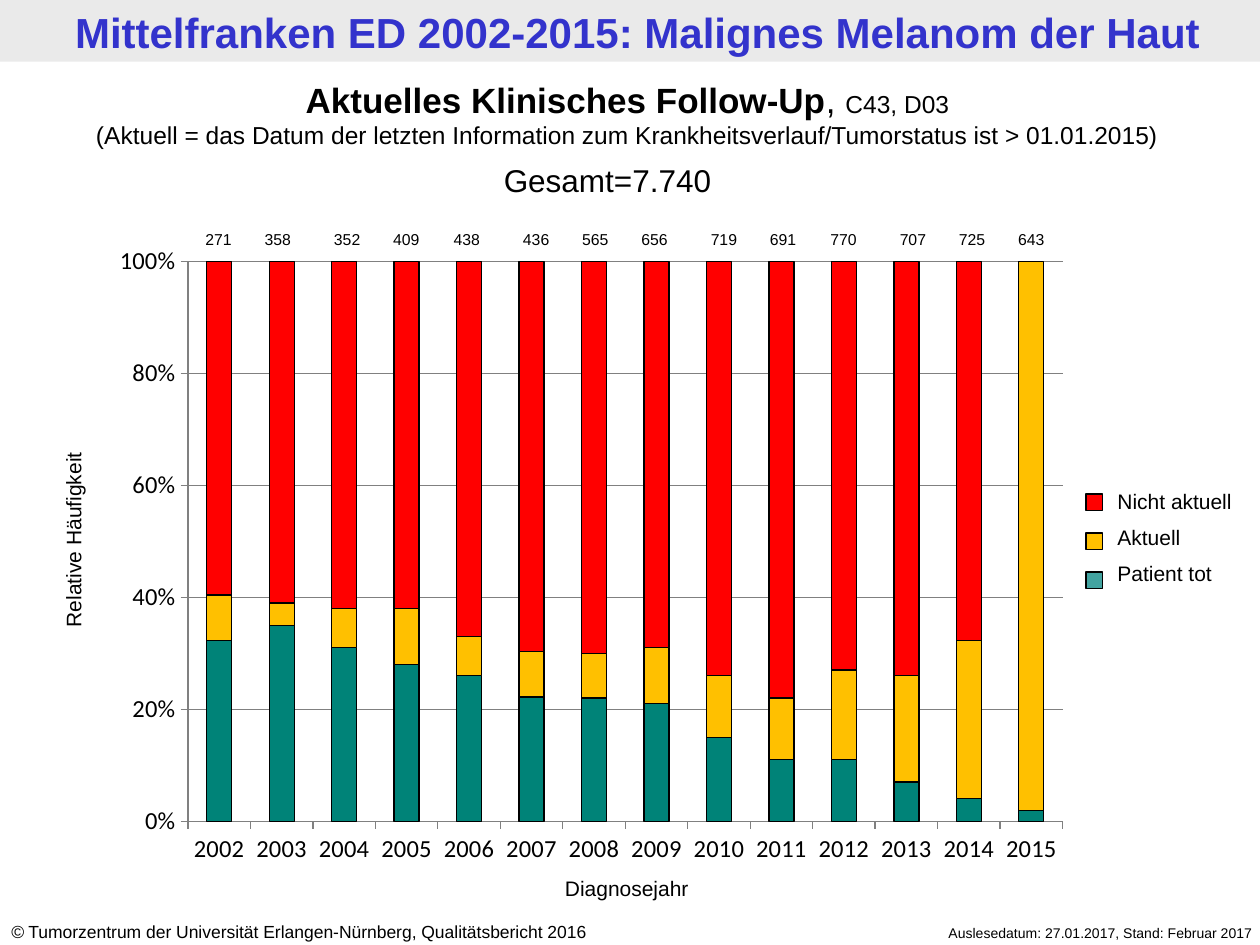
from lxml import etree
from pptx import Presentation
from pptx.chart.data import CategoryChartData
from pptx.dml.color import RGBColor
from pptx.enum.chart import XL_CHART_TYPE as ChartType, XL_TICK_MARK as TickMark
from pptx.enum.shapes import MSO_SHAPE as Shape
from pptx.enum.text import MSO_ANCHOR as Anchor, MSO_AUTO_SIZE as AutoSize, PP_ALIGN as Align
from pptx.oxml.ns import qn
from pptx.util import Inches, Pt

BLACK = RGBColor(0, 0, 0)
BLUE = RGBColor(0x33, 0x33, 0xCC)
LIGHT_GREY = RGBColor(0xEA, 0xEA, 0xEA)
GREY = RGBColor(0x80, 0x80, 0x80)
TEAL = RGBColor(0x00, 0x83, 0x78)
LEGEND_TEAL = RGBColor(0x00, 0x83, 0x80)
AMBER = RGBColor(0xFF, 0xC0, 0x00)
RED = RGBColor(0xFF, 0x00, 0x00)

deck = Presentation()
deck.slide_width, deck.slide_height = Inches(10), Inches(7.5)
page = deck.slides.add_slide(deck.slide_layouts[5])


def add_text(place, *lines, size=12, align=Align.LEFT, gap=0, rotation=0):
    """Add a text box; each line is a string or a list of (text, format) runs."""
    box = page.shapes.add_textbox(*[Inches(length) for length in place])
    box.rotation = rotation
    frame = box.text_frame
    frame.word_wrap = True
    for index, line in enumerate(lines):
        para = frame.paragraphs[0] if index == 0 else frame.add_paragraph()
        para.alignment = align
        if index:
            para.space_before = Pt(gap)
        for text, style in [(line, {})] if isinstance(line, str) else line:
            span = para.add_run()
            span.text = text
            span.font.name = "Arial"
            span.font.size = Pt(style.get("size", size))
            span.font.bold = style.get("bold", False)
            span.font.italic = style.get("italic", False)
            span.font.color.rgb = BLACK


def add_rectangle(place, fill, line=None):
    box = page.shapes.add_shape(Shape.RECTANGLE, *[Inches(length) for length in place])
    box.shadow.inherit = False
    box.fill.solid()
    box.fill.fore_color.rgb = fill
    if line is None:
        box.line.fill.background()
    else:
        box.line.color.rgb = line
        box.line.width = Pt(0.75)
    return box


# Title on its grey band
band = add_rectangle((0, 0, 10, 0.49), LIGHT_GREY)
title = page.shapes.title
title.left, title.top = Inches(0.06), Inches(0.01)
title.width, title.height = Inches(10), Inches(0.49)
title.text_frame.text = "Mittelfranken ED 2002-2015: Malignes Melanom der Haut"
title.text_frame.auto_size = AutoSize.NONE
title.text_frame.vertical_anchor = Anchor.MIDDLE
title_para = title.text_frame.paragraphs[0]
title_para.alignment = Align.CENTER
title_para.font.name = "Arial"
title_para.font.size = Pt(24)
title_para.font.bold = True
title_para.font.color.rgb = BLUE
band.element.addnext(title.element)

# Headings and footer
add_text((-0.04, 0.57, 10.04, 0.67),
         [("Aktuelles Klinisches Follow-Up", {"size": 20, "bold": True}),
          (", ", {"size": 20}), ("C43, D03", {})],
         "(Aktuell = das Datum der letzten Information zum "
         "Krankheitsverlauf/Tumorstatus ist > 01.01.2015)",
         size=14, align=Align.CENTER)
add_text((3.9, 1.23, 2.2, 0.4), "Gesamt=7.740", size=18)
add_text((-0.01, 7.26, 5.24, 0.27),
         [("©", {"italic": True}),
          (" Tumorzentrum der Universität Erlangen-Nürnberg, Qualitätsbericht 2016", {})],
         size=10)
add_text((6.65, 7.29, 3.39, 0.24), "Auslesedatum: 27.01.2017, Stand: Februar 2017",
         size=8, align=Align.RIGHT)

# Stacked chart of follow-up status by year of diagnosis
data = CategoryChartData()
data.categories = [str(year) for year in range(2002, 2016)]
status_series = [
    ("Patient tot", TEAL, (32, 35, 31, 28, 26, 22, 22, 21, 15, 11, 11, 7, 4, 2)),
    ("Aktuell", AMBER, (8, 4, 7, 10, 7, 8, 8, 10, 11, 11, 16, 19, 28, 98)),
    ("Nicht aktuell", RED, (59, 61, 62, 62, 67, 69, 70, 69, 74, 78, 73, 74, 67, 0)),
]
for name, _, values in status_series:
    data.add_series(name, values)
chart = page.shapes.add_chart(ChartType.COLUMN_STACKED_100, Inches(0.79), Inches(1.87),
                              Inches(7.8), Inches(5.11), data).chart
chart.has_legend = False
chart.has_title = False
chart.font.name = "Calibri"
chart.font.size = Pt(14)
chart.font.color.rgb = BLACK

plot = chart.plots[0]
plot.gap_width = 150
plot.overlap = 100
plot.vary_by_categories = False
for series, (_, color, _) in zip(plot.series, status_series):
    series.format.fill.solid()
    series.format.fill.fore_color.rgb = color
    series.format.line.color.rgb = BLACK
    series.format.line.width = Pt(0.75)

value_axis = chart.value_axis
value_axis.minimum_scale, value_axis.maximum_scale = 0, 1
value_axis.major_unit = 0.2
value_axis.tick_labels.number_format = "0%"
value_axis.tick_labels.number_format_is_linked = False
value_axis.has_major_gridlines = True
value_axis.major_gridlines.format.line.color.rgb = GREY
for axis in (chart.category_axis, value_axis):
    axis.major_tick_mark = TickMark.OUTSIDE
    axis.format.line.color.rgb = GREY
    axis.tick_labels.font.size = Pt(14)

# Fix the inner plot area so the bars line up with the counts above
plot_area = chart.element.find(".//" + qn("c:plotArea"))
layout = plot_area.find(qn("c:layout"))
if layout is None:
    layout = etree.Element(qn("c:layout"))
    plot_area.insert(0, layout)
manual = etree.SubElement(layout, qn("c:manualLayout"))
for tag, value in (("layoutTarget", "inner"), ("xMode", "edge"), ("yMode", "edge"),
                   ("x", "0.09"), ("y", "0.04"), ("w", "0.89"), ("h", "0.87")):
    etree.SubElement(manual, qn("c:" + tag)).set("val", value)

# Axis titles
add_text((-0.62, 4.13, 2.41, 0.31), "Relative Häufigkeit", align=Align.CENTER, rotation=270)
add_text((3.85, 6.9, 2.25, 0.31), "Diagnosejahr", align=Align.CENTER)

# Legend
add_text((8.77, 3.83, 1.42, 0.91), "Nicht aktuell", "Aktuell", "Patient tot", gap=6)
for row, color in enumerate((RED, AMBER, LEGEND_TEAL)):
    swatch = add_rectangle((8.62, 3.92 + 0.31 * row, 0.13, 0.13), color, BLACK)
swatch_color = swatch.element.spPr.find(qn("a:solidFill"))[0]
etree.SubElement(swatch_color, qn("a:alpha")).set("val", "74000")

# Number of cases above each bar
case_counts = [
    (1.46, 271), (1.93, 358), (2.48, 352), (2.95, 409), (3.43, 438), (3.98, 436), (4.45, 565),
    (4.92, 656), (5.47, 719), (5.94, 691), (6.42, 770), (6.97, 707), (7.44, 725), (7.91, 643),
]
for left, count in case_counts:
    add_text((left, 1.77, 0.55, 0.25), str(count), size=9, align=Align.CENTER)

deck.save("out.pptx")
